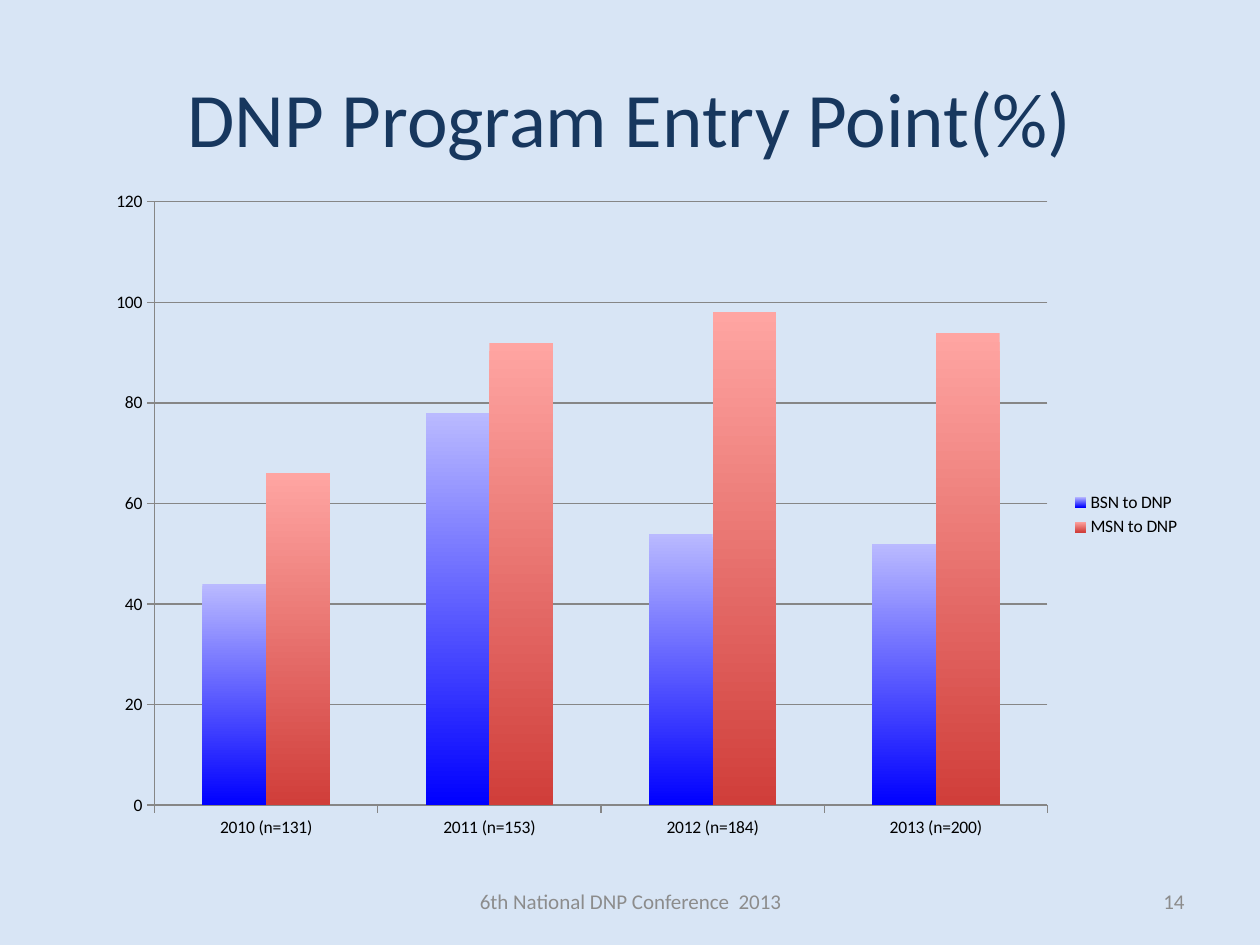
from pptx import Presentation
from pptx.chart.data import CategoryChartData
from pptx.dml.color import RGBColor
from pptx.enum.chart import XL_CHART_TYPE, XL_LEGEND_POSITION, XL_TICK_MARK
from pptx.enum.text import MSO_ANCHOR, PP_ALIGN
from pptx.util import Cm, Pt

# Content
TITLE = "DNP Program Entry Point(%)"
CATEGORIES = ["2010 (n=131)", "2011 (n=153)", "2012 (n=184)", "2013 (n=200)"]
SERIES = [  # name, values, top colour, bottom colour
    ("BSN to DNP", [44, 78, 54, 52], "BABAFF", "0000FF"),
    ("MSN to DNP ", [66, 92, 98, 94], "FFA5A2", "D03E3A"),
]
FOOTERS = [  # text, left, width, alignment
    ("6th National DNP Conference  2013", 8.69, 8.05, PP_ALIGN.CENTER),
    ("14", 18.21, 5.92, PP_ALIGN.RIGHT),
]
FONT = "Calibri"
AXIS_COLOUR = "868686"


def colour(value):
    return RGBColor.from_string(value)


def style_text(shape, text, size, text_colour, alignment):
    frame = shape.text_frame
    frame.text = text
    frame.word_wrap = True
    frame.vertical_anchor = MSO_ANCHOR.MIDDLE
    paragraph = frame.paragraphs[0]
    paragraph.alignment = alignment
    font = paragraph.runs[0].font
    font.name, font.size = FONT, Pt(size)
    font.color.rgb = colour(text_colour)


def style_line(line):
    line.color.rgb = colour(AXIS_COLOUR)
    line.width = Pt(0.75)


# Slide and background
presentation = Presentation()
presentation.slide_width, presentation.slide_height = Cm(25.4), Cm(19.05)
slide = presentation.slides.add_slide(presentation.slide_layouts[5])
slide.background.fill.solid()
slide.background.fill.fore_color.rgb = colour("D8E5F5")

# Title
title = slide.shapes.title
title.left, title.top, title.width, title.height = Cm(1.27), Cm(0.76), Cm(22.86), Cm(3.18)
style_text(title, TITLE, 44, "17375E", PP_ALIGN.CENTER)

# Chart
chart_data = CategoryChartData(number_format="0")
chart_data.categories = CATEGORIES
for name, values, _, _ in SERIES:
    chart_data.add_series(name, values)
chart = slide.shapes.add_chart(
    XL_CHART_TYPE.COLUMN_CLUSTERED, Cm(1.9), Cm(3.6), Cm(22.23), Cm(13.55), chart_data
).chart
chart.has_title = False
chart.font.name, chart.font.size = FONT, Pt(10)
chart.font.color.rgb = colour("000000")
chart.has_legend = True
chart.legend.position = XL_LEGEND_POSITION.RIGHT
chart.legend.include_in_layout = False

# Columns with a vertical gradient
plot = chart.plots[0]
plot.gap_width, plot.overlap = 150, 0
plot.vary_by_categories = False
for series, (_, _, top_colour, bottom_colour) in zip(plot.series, SERIES):
    fill = series.format.fill
    fill.gradient()
    fill.gradient_angle = 270
    for stop, stop_colour in zip(fill.gradient_stops, (top_colour, bottom_colour)):
        stop.color.rgb = colour(stop_colour)

# Axes
for axis in (chart.category_axis, chart.value_axis):
    axis.major_tick_mark = XL_TICK_MARK.OUTSIDE
    axis.minor_tick_mark = XL_TICK_MARK.NONE
    style_line(axis.format.line)
value_axis = chart.value_axis
value_axis.minimum_scale, value_axis.maximum_scale, value_axis.major_unit = 0, 120, 20
value_axis.has_major_gridlines = True
style_line(value_axis.major_gridlines.format.line)
value_axis.tick_labels.number_format = "0"
value_axis.tick_labels.number_format_is_linked = False

# Footer and slide number
for text, left, width, alignment in FOOTERS:
    box = slide.shapes.add_textbox(Cm(left), Cm(17.65), Cm(width), Cm(1.02))
    style_text(box, text, 12, "8C8C8C", alignment)

presentation.save("out.pptx")
